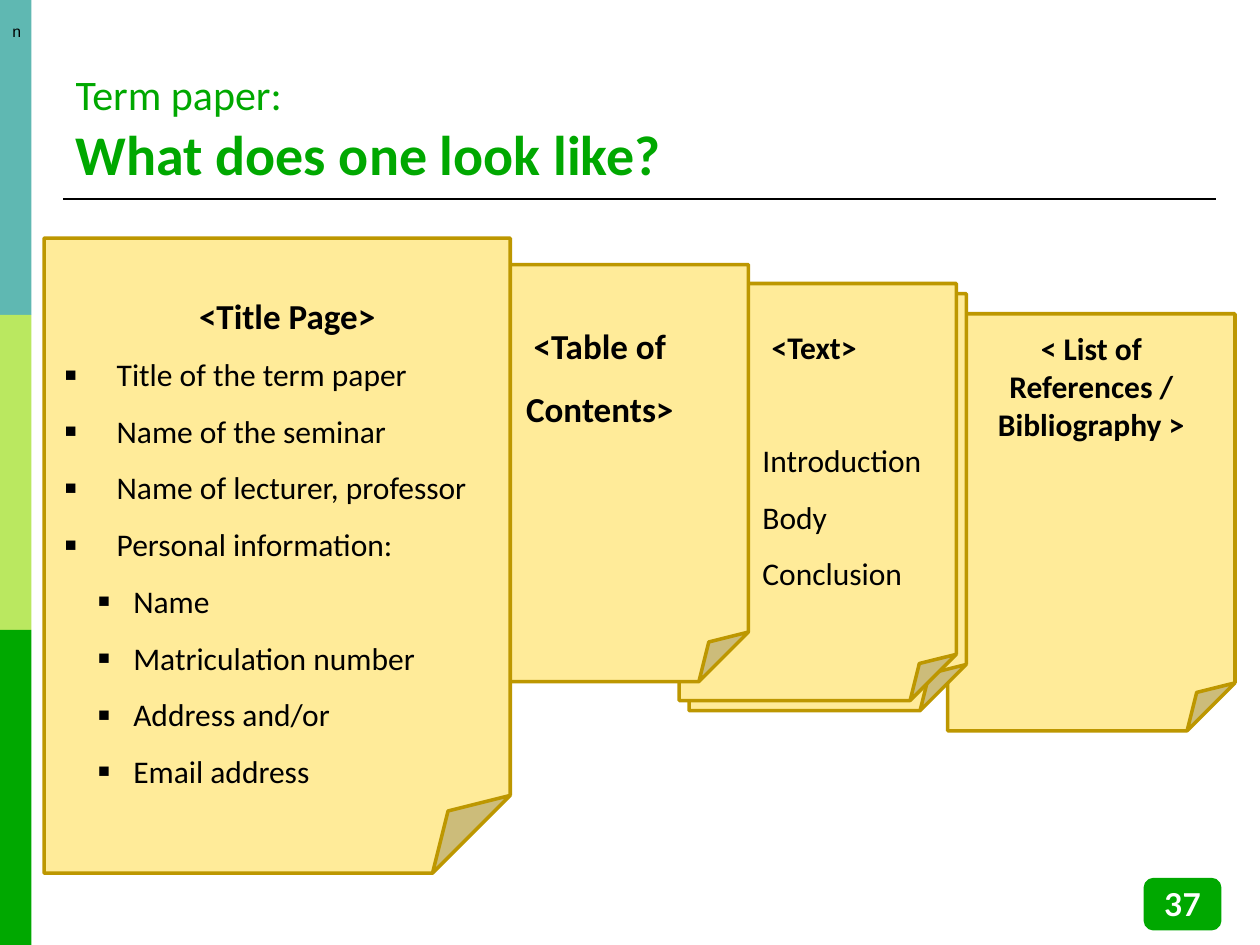
import pptx
import pptx.util
import pptx.oxml
import pptx.dml.color
import pptx.enum.shapes
import pptx.enum.text
from pptx.oxml.ns import qn

Pt = pptx.util.Pt
Shape = pptx.enum.shapes.MSO_SHAPE
Align = pptx.enum.text.PP_ALIGN
Anchor = pptx.enum.text.MSO_ANCHOR

COLORS = {"teal": "5FB8B2", "lime": "BAE860", "green": "00A800", "paper": "FFEB99",
          "edge": "BD9700", "black": "000000", "white": "FFFFFF"}

STRIPES = ["teal", "lime", "green"]
TITLE = [("Term paper: ", 24, False), ("What does one look like?", 32, True)]

HEADING = {"size": 18, "bold": True, "align": Align.CENTER}
LARGE = {**HEADING, "size": 20}
PLAIN = {"size": 18, "spacing": 1.5, "left": 40.5}
ITEM = {"size": 18, "spacing": 1.5, "left": 30, "hang": 30, "bullet": "▪"}
SUBITEM = {**ITEM, "left": 39.5, "hang": 20.5}

SHEETS = [
    {"at": (541.5, 179.3, 164.2, 238.3), "insets": (7.2, 8.7, 7.2, 0),
     "text": [("< List of References / Bibliography >", HEADING)]},
    {"at": (393.8, 167.8, 158.4, 238.3), "insets": (0, 0, 0, 0), "text": []},
    {"at": (388.1, 162, 158.4, 238.3), "insets": (7.2, 25.5, 11.2, 0),
     "text": [("<Text>", HEADING), ("Introduction", {**PLAIN, "before": 32}),
              ("Body", PLAIN), ("Conclusion", PLAIN)]},
    {"at": (257.8, 151.2, 169.9, 238.3), "insets": (7.2, 22, 7.2, 0),
     "text": [("<Table of Contents>", {**LARGE, "spacing": 1.5})]},
    {"at": (25.2, 136.1, 266.4, 362.9), "insets": (11.5, 32, 0, 0),
     "text": [("<Title Page>", LARGE),
              ("Title of the term paper", ITEM),
              ("Name of the seminar", ITEM),
              ("Name of lecturer, professor", ITEM),
              ("Personal information:", ITEM),
              ("Name", SUBITEM),
              ("Matriculation number", SUBITEM),
              ("Address and/or", SUBITEM),
              ("Email address", SUBITEM)]},
]


def color(name):
    return pptx.dml.color.RGBColor.from_string(COLORS[name])


def set_font(font, ink="black", **values):
    for name, value in values.items():
        setattr(font, name, value)
    font.color.rgb = color(ink)


def set_frame(frame, insets, anchor, wrap=True):
    sides = ("margin_left", "margin_top", "margin_right", "margin_bottom")
    values = dict(zip(sides, map(Pt, insets)))
    values.update(vertical_anchor=anchor, word_wrap=wrap)
    for name, value in values.items():
        setattr(frame, name, value)


def add_block(page, kind, at, fill, edge=None):
    block = page.shapes.add_shape(kind, *map(Pt, at))
    block.shadow.inherit = False
    block.fill.solid()
    block.fill.fore_color.rgb = color(fill)
    if edge:
        block.line.color.rgb = color(edge)
        block.line.width = Pt(2)
    else:
        block.line.fill.background()
    return block


def add_bullet(props, character):
    for tag, name, value in (("a:buSzPct", "val", "120000"),
                             ("a:buFont", "typeface", "Arial"),
                             ("a:buChar", "char", character)):
        pptx.oxml.xmlchemy.OxmlElement(tag)
        node = pptx.oxml.xmlchemy.OxmlElement(tag)
        node.set(name, value)
        props.append(node)


def write_paragraphs(frame, lines):
    for index, (text, style) in enumerate(lines):
        para = frame.paragraphs[0] if index == 0 else frame.add_paragraph()
        para.alignment = style.get("align", Align.LEFT)
        para.line_spacing = style.get("spacing", 1.0)
        para.space_before = Pt(style.get("before", 0))
        props = para._p.get_or_add_pPr()
        props.set("marL", str(Pt(style.get("left", 0))))
        props.set("indent", str(-Pt(style.get("hang", 0))))
        if "bullet" in style:
            add_bullet(props, style["bullet"])
        span = para.add_run()
        span.text = text
        set_font(span.font, name="Calibri", size=Pt(style["size"]),
                 bold=style.get("bold", False))


def add_title(page):
    title = page.shapes.title
    place = dict(zip(("left", "top", "width", "height"), map(Pt, (36, 20.2, 658.8, 90))))
    for name, value in place.items():
        setattr(title, name, value)
    set_frame(title.text_frame, (7.2, 3.6, 7.2, 3.6), Anchor.BOTTOM)
    para = title.text_frame.paragraphs[0]
    para.alignment = Align.LEFT
    for index, (text, size, bold) in enumerate(TITLE):
        if index:
            para.add_line_break()
        span = para.add_run()
        span.text = text
        set_font(span.font, "green", name="Calibri", size=Pt(size), bold=bold)


def add_rule(page):
    rule = page.shapes.add_connector(pptx.enum.shapes.MSO_CONNECTOR.STRAIGHT,
                                     Pt(36), Pt(113.8), Pt(694.8), Pt(113.8))
    rule.line.color.rgb = color("black")
    rule.line.width = Pt(1.5)
    rule._element.find(qn("p:spPr")).append(pptx.oxml.xmlchemy.OxmlElement("a:effectLst"))


def add_marker(page):
    box = page.shapes.add_textbox(*map(Pt, (0, 8.6, 19.4, 18)))
    set_frame(box.text_frame, (7.2, 3.6, 7.2, 3.6), Anchor.MIDDLE, False)
    span = box.text_frame.paragraphs[0].add_run()
    span.text = "n"
    set_font(span.font, name="Arial", size=Pt(9))


def add_page_number(page):
    badge = add_block(page, Shape.ROUNDED_RECTANGLE, (654.5, 502.6, 42.5, 28.1),
                      "green", "green")
    set_frame(badge.text_frame, (0, 0, 0, 0), Anchor.MIDDLE)
    para = badge.text_frame.paragraphs[0]
    para.alignment = Align.CENTER
    span = para.add_run()
    span.text = "37"
    set_font(span.font, "white", name="Lato", size=Pt(18), bold=True)


def main():
    deck = pptx.Presentation()
    deck.slide_width, deck.slide_height = Pt(720), Pt(540)
    page = deck.slides.add_slide(deck.slide_layouts[5])
    for row, fill in enumerate(STRIPES):
        add_block(page, Shape.RECTANGLE, (0, row * 180, 18, 180), fill)
    add_rule(page)
    add_title(page)
    add_marker(page)
    for sheet in SHEETS:
        block = add_block(page, Shape.FOLDED_CORNER, sheet["at"], "paper", "edge")
        set_frame(block.text_frame, sheet["insets"], Anchor.TOP)
        write_paragraphs(block.text_frame, sheet["text"])
    add_page_number(page)
    deck.save("out.pptx")


if __name__ == "__main__":
    main()
